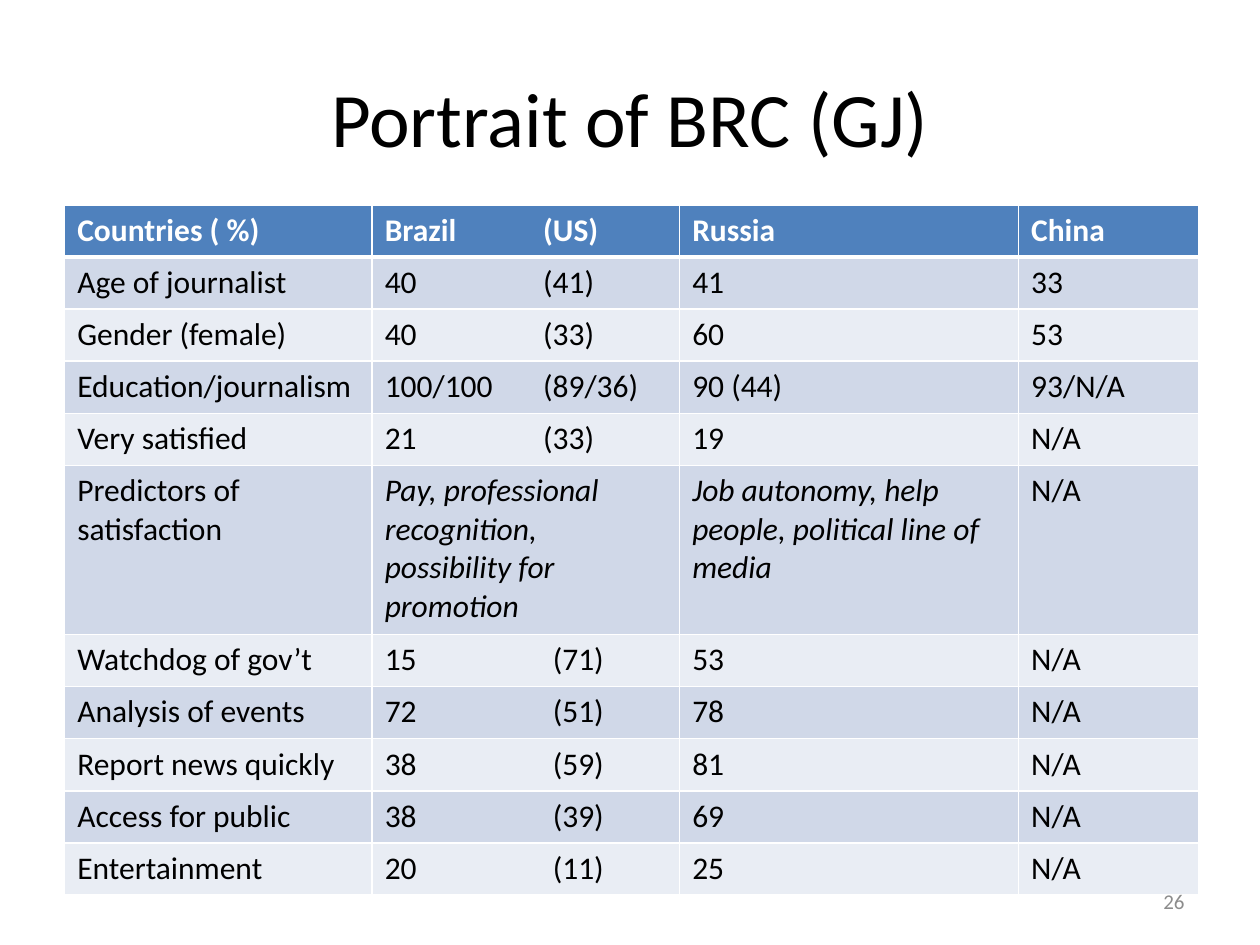
"""Builds a one-slide table comparing journalists in Brazil, Russia and China."""
from dataclasses import dataclass

from pptx import Presentation
from pptx.dml.color import RGBColor as RGB
from pptx.enum.text import MSO_ANCHOR as ANCHOR, PP_ALIGN as ALIGN
from pptx.oxml import parse_xml
from pptx.oxml.ns import nsdecls
from pptx.util import Pt


@dataclass(frozen=True)
class Theme:
    font: str = "Calibri"
    black: str = "000000"
    white: str = "FFFFFF"
    grey: str = "8C8C8C"
    header: str = "4F81BD"
    bands: tuple = ("D0D8E8", "E9EDF4")
    title_size: int = 44
    body_size: int = 18
    number_size: int = 12


THEME = Theme()
COLUMNS = (175.7, 175.7, 193.7, 103)
ROW_HEIGHT, TALL_HEIGHT, TALL_ROW = 29.8, 96.6, 5
US_TAB, US_TAB_LOWER = 90.5, 96
ROWS = (
    ("Countries ( %)", "Brazil\t(US)", "Russia", "China"),
    ("Age of journalist", "40\t(41)", "41", "33"),
    ("Gender (female)", "40\t(33)", "60", "53"),
    ("Education/journalism", "100/100\t(89/36)", "90 (44)", "93/N/A"),
    ("Very satisfied", "21\t(33)", "19", "N/A"),
    ("Predictors of satisfaction",
     "Pay, professional recognition, possibility for promotion",
     "Job autonomy, help people, political line of media", "N/A"),
    ("Watchdog of gov’t", "15\t(71)", "53", "N/A"),
    ("Analysis of events", "72\t(51)", "78", "N/A"),
    ("Report news quickly", "38\t(59)", "81", "N/A"),
    ("Access for public", "38\t(39)", "69", "N/A"),
    ("Entertainment", "20\t(11)", "25", "N/A"),
)


def write(tf, text, color, size, align=ALIGN.LEFT, **formats):
    """Put one formatted run in a text frame and return its paragraph."""
    p = tf.paragraphs[0]
    p.alignment = align
    r = p.add_run()
    r.text = text
    r.font.color.rgb = RGB.from_string(color)
    for name, value in {"name": THEME.font, "size": Pt(size), **formats}.items():
        setattr(r.font, name, value)
    return p


def place(sp, left, top, width, height):
    """Set the position and size of a shape and centre its text vertically."""
    box = {"left": left, "top": top, "width": width, "height": height}
    for name, value in box.items():
        setattr(sp, name, Pt(value))
    sp.text_frame.vertical_anchor = ANCHOR.MIDDLE
    sp.text_frame.word_wrap = True


def add_tab(p, position):
    """Give a paragraph one left tab stop."""
    p._p.get_or_add_pPr().append(parse_xml(
        f'<a:tabLst {nsdecls("a")}><a:tab pos="{Pt(position)}" algn="l"/></a:tabLst>'))


def add_borders(cell, bottom):
    """Draw white borders round a cell, with its own bottom width."""
    for side, width in {"L": 1, "R": 1, "T": 1, "B": bottom}.items():
        cell._tc.get_or_add_tcPr().append(parse_xml(
            f'<a:ln{side} {nsdecls("a")} w="{Pt(width)}"><a:solidFill>'
            f'<a:srgbClr val="{THEME.white}"/></a:solidFill></a:ln{side}>'))


def fill_cell(cell, text, row, col):
    """Write and format one table cell."""
    is_header = row == 0
    p = write(cell.text_frame, text, THEME.white if is_header else THEME.black,
              THEME.body_size, bold=is_header,
              italic=row == TALL_ROW and col in (1, 2))
    if "\t" in text:
        add_tab(p, US_TAB if row < TALL_ROW else US_TAB_LOWER)
    add_borders(cell, 3 if is_header else 1)
    cell.fill.solid()
    cell.fill.fore_color.rgb = RGB.from_string(
        THEME.header if is_header else THEME.bands[(row - 1) % 2])


def add_country_table(slide):
    """Add the table of countries."""
    height = ROW_HEIGHT * (len(ROWS) - 1) + TALL_HEIGHT
    table = slide.shapes.add_table(len(ROWS), len(COLUMNS), Pt(37), Pt(117),
                                   Pt(sum(COLUMNS)), Pt(height)).table
    for column, width in zip(table.columns, COLUMNS):
        column.width = Pt(width)
    for row, texts in enumerate(ROWS):
        table.rows[row].height = Pt(TALL_HEIGHT if row == TALL_ROW else ROW_HEIGHT)
        for col, text in enumerate(texts):
            fill_cell(table.cell(row, col), text, row, col)


def add_title(slide, text):
    """Move and fill the title placeholder."""
    sp = slide.shapes.title
    place(sp, 36, 21.6, 648, 90)
    write(sp.text_frame, text, THEME.black, THEME.title_size, ALIGN.CENTER)


def add_page_number(slide, text):
    """Add the page number at the lower right."""
    sp = slide.shapes.add_textbox(0, 0, 0, 0)
    place(sp, 516, 500.5, 168, 28.75)
    write(sp.text_frame, text, THEME.grey, THEME.number_size, ALIGN.RIGHT)


def main():
    """Build and save the slide."""
    prs = Presentation()
    prs.slide_width, prs.slide_height = Pt(720), Pt(540)
    slide = prs.slides.add_slide(prs.slide_layouts[5])
    add_title(slide, "Portrait of BRC (GJ)")
    add_country_table(slide)
    add_page_number(slide, "26")
    prs.save("out.pptx")


if __name__ == "__main__":
    main()
